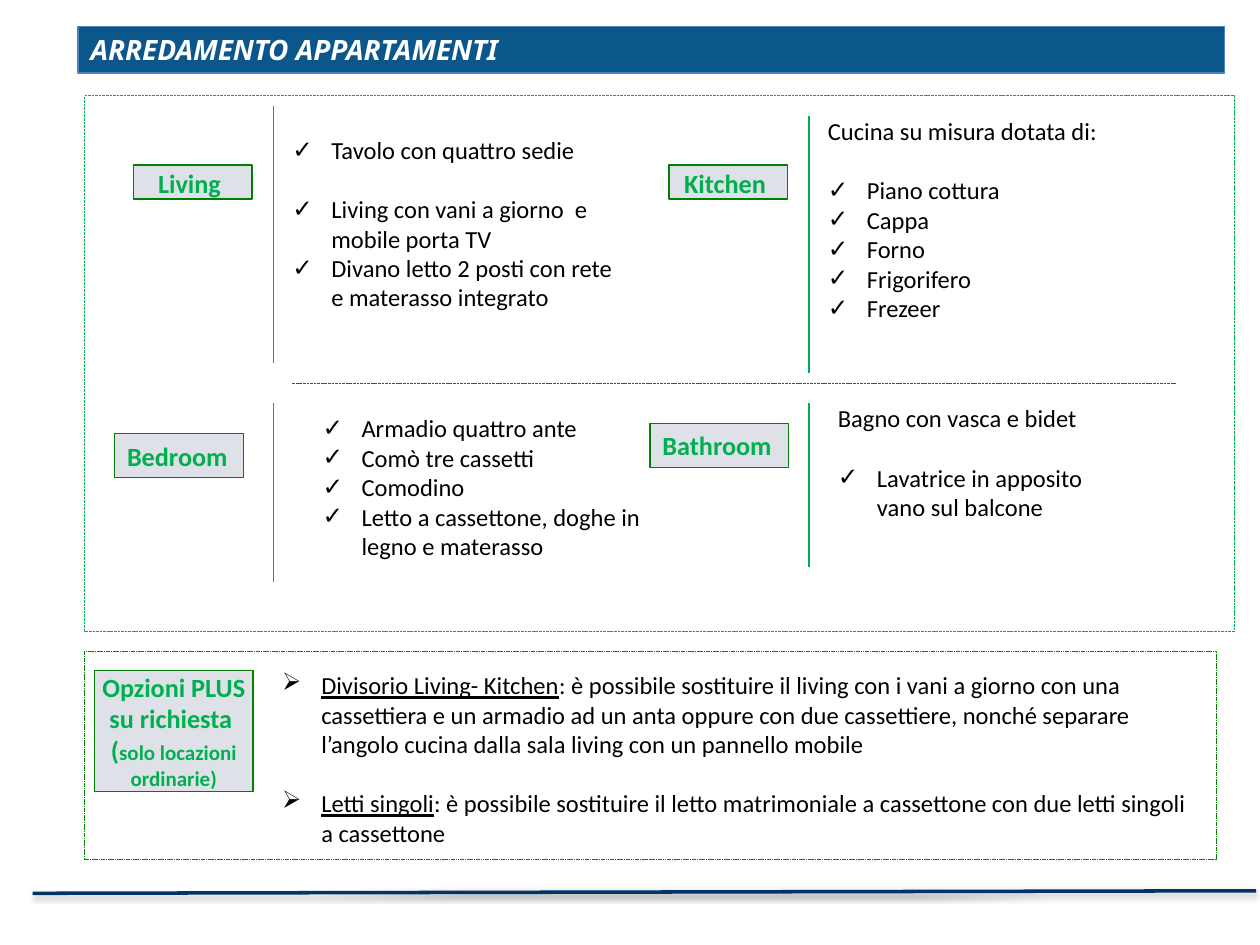
from lxml import etree
from pptx import Presentation
from pptx.dml.color import RGBColor
from pptx.enum import dml, shapes, text
from pptx.oxml import ns
from pptx.util import Inches, Pt

INK, ACCENT, EDGE, PALE = "000000", "00B050", "008000", "DEE1E7"
NAVY, BLUE, BLUE_EDGE, WHITE = "003366", "0B578B", "4F81BD", "FFFFFF"
TICK, ARROW = "✓", "➢"
LINE_GAP = 17.1
FRAME = (0.67, 0.76, 9.13, 4.25)
COLUMN_STEP, ROW_STEP, RAIL = 4.25, 2.28, 1.5


def colour(value):
    return RGBColor.from_string(value)


def child(parent, tag, **attributes):
    return etree.SubElement(parent, ns.qn(tag), attributes)


def within(area, offset):
    return (area[0] + offset[0], area[1] + offset[1], *offset[2:])


def place(part, box):
    part.left, part.top, part.width, part.height = map(Inches, box)


def set_line(line, value, width, dashed=False):
    line.color.rgb = colour(value)
    line.width = Pt(width)
    if dashed:
        line.dash_style = dml.MSO_LINE.SQUARE_DOT
        line._get_or_add_ln().find(ns.qn("a:prstDash")).set("val", "sysDash")


def add_run(paragraph, words, size, value, bold=False, italic=False,
            underline=False, face="Calibri"):
    run = paragraph.add_run()
    run.text = words
    font = run.font
    font.name, font.size = face, Pt(size)
    font.bold, font.italic, font.underline = bold, italic, underline
    font.color.rgb = colour(value)


def set_frame(frame, margins=(0, 0), anchor=text.MSO_ANCHOR.TOP):
    frame.word_wrap = True
    frame.auto_size = text.MSO_AUTO_SIZE.NONE
    frame.vertical_anchor = anchor
    frame.margin_left = frame.margin_right = Inches(margins[0])
    frame.margin_top = frame.margin_bottom = Inches(margins[1])


def add_rectangle(slide, box, edge, width, fill=None, dashed=False):
    rectangle = slide.shapes.add_shape(
        shapes.MSO_SHAPE.RECTANGLE, *map(Inches, box))
    rectangle.shadow.inherit = False
    if fill:
        rectangle.fill.solid()
        rectangle.fill.fore_color.rgb = colour(fill)
    else:
        rectangle.fill.background()
    set_line(rectangle.line, edge, width, dashed)
    return rectangle


def add_rule(slide, start, end, value, width, dashed=False):
    rule = slide.shapes.add_connector(
        shapes.MSO_CONNECTOR.STRAIGHT, *map(Inches, (*start, *end)))
    set_line(rule.line, value, width, dashed)
    return child(rule._element.spPr, "a:effectLst")


def add_label(slide, box, lines, margins=(0, 0), centred=True, width=0.75):
    label = add_rectangle(slide, box, EDGE, width, PALE)
    frame = label.text_frame
    set_frame(frame, margins, text.MSO_ANCHOR.MIDDLE)
    for index, runs in enumerate(lines):
        paragraph = frame.paragraphs[0] if index == 0 else frame.add_paragraph()
        paragraph.alignment = text.PP_ALIGN.CENTER if centred else text.PP_ALIGN.LEFT
        for words, size in runs:
            add_run(paragraph, words, size, ACCENT, bold=True)


def fill_list(holder, box, items):
    place(holder, box)
    frame = holder.text_frame
    set_frame(frame)
    for index, (bullet, gap, runs) in enumerate(items):
        paragraph = frame.paragraphs[0] if index == 0 else frame.add_paragraph()
        paragraph.alignment = text.PP_ALIGN.LEFT
        paragraph.space_before = Pt(gap)
        properties = paragraph._p.get_or_add_pPr()
        indent = Inches(0.31) if bullet else 0
        properties.set("marL", str(indent))
        properties.set("indent", str(-indent))
        if bullet:
            child(properties, "a:buChar", char=bullet)
        else:
            child(properties, "a:buNone")
        for words, underline in runs:
            add_run(paragraph, words, 14, INK, underline=underline)


def ticks(*entries, first_gap=0):
    return [(TICK, 0 if index else first_gap, [(entry, False)])
            for index, entry in enumerate(entries)]


def heading(words):
    return [(None, 0, [(words, False)])]


def build_title(slide, box):
    title = slide.shapes.title
    place(title, box)
    title.fill.solid()
    title.fill.fore_color.rgb = colour(BLUE)
    set_line(title.line, BLUE_EDGE, 0.75)
    set_frame(title.text_frame, (0.1, 0.05), text.MSO_ANCHOR.MIDDLE)
    paragraph = title.text_frame.paragraphs[0]
    paragraph.alignment = text.PP_ALIGN.LEFT
    add_run(paragraph, "ARREDAMENTO APPARTAMENTI", 16, WHITE, bold=True,
            italic=True, face="Noto Sans")


def build_room(slide, area, holder, rail, label, items_box, items):
    x, y = area[0] + RAIL, area[1]
    add_rule(slide, (x, y + rail[0]), (x, y + rail[1]), ACCENT, 0.75)
    add_label(slide, within(area, label["box"]), label["lines"],
              label.get("margins", (0, 0)), label.get("centred", True),
              label.get("width", 0.75))
    fill_list(holder, within(area, items_box), items)


def build_rooms(slide, frame):
    add_rectangle(slide, frame, ACCENT, 0.5, dashed=True)
    middle = frame[1] + ROW_STEP
    add_rule(slide, (frame[0] + 1.65, middle), (frame[0] + 8.66, middle),
             EDGE, 0.5, dashed=True)
    small = (0.39, 0.55, 0.94, 0.27)
    padded = {"margins": (0.1, 0.05), "centred": False}
    rooms = [
        ((0.08, 2.12),
         {"box": small, "lines": [[("Living", 15), (" ", 16)]]},
         (1.65, 0.31, 2.6, 1.95),
         ticks("Tavolo con quattro sedie")
         + ticks("Living con vani a giorno  e mobile porta TV",
                 "Divano letto 2 posti con rete e materasso integrato",
                 first_gap=LINE_GAP)),
        ((0.16, 2.2),
         {"box": small, "lines": [[("Kitchen", 15), (" ", 16)]]},
         (1.65, 0.16, 2.28, 1.65),
         heading("Cucina su misura dotata di:")
         + ticks("Piano cottura", "Cappa", "Forno", "Frigorifero", "Frezeer",
                 first_gap=LINE_GAP)),
        ((0.16, 1.58),
         {"box": (0.24, 0.4, 1.02, 0.35), "lines": [[("Bedroom", 15)]],
          "width": 0.5, **padded},
         (1.89, 0.24, 2.6, 1.18),
         ticks("Armadio quattro ante", "Comò tre cassetti", "Comodino",
               "Letto a cassettone, doghe in legno e materasso")),
        ((0.16, 1.46),
         {"box": (0.24, 0.32, 1.1, 0.35), "lines": [[("Bathroom", 15)]], **padded},
         (1.73, 0.16, 2.28, 1.72),
         heading("Bagno con vasca e bidet")
         + ticks("Lavatrice in apposito vano sul balcone", first_gap=LINE_GAP)),
    ]
    for index, room in enumerate(rooms):
        row, column = divmod(index, 2)
        area = (frame[0] + column * COLUMN_STEP, frame[1] + row * ROW_STEP)
        build_room(slide, area, slide.placeholders[index + 1], *room)


def build_options(slide, frame):
    add_rectangle(slide, frame, EDGE, 0.25, dashed=True)
    add_label(slide, within(frame, (0.08, 0.15, 1.26, 0.96)),
              [[("Opzioni PLUS su richiesta ", 15)],
               [("(", 15), ("solo locazioni ordinarie)", 12)]])
    box = within(frame, (1.57, 0.15, 7.24, 1.41))
    options = slide.shapes.add_textbox(*map(Inches, box))
    fill_list(options, box, [
        (ARROW, 0, [
            ("Divisorio Living- Kitchen", True),
            (": è possibile sostituire il living con i vani a giorno con una "
             "cassettiera e un armadio ad un anta oppure con due cassettiere, "
             "nonché separare l’angolo cucina dalla sala living con un "
             "pannello mobile", False)]),
        (ARROW, LINE_GAP, [
            ("Letti singoli", True),
            (": è possibile sostituire il letto matrimoniale a cassettone con "
             "due letti singoli a cassettone", False)])])


def build_footer(slide, start, end):
    effects = add_rule(slide, start, end, NAVY, 2)
    shadow = child(effects, "a:outerShdw", blurRad=str(Pt(3.1)),
                   dist=str(Pt(1.6)), dir="5400000", rotWithShape="0")
    child(child(shadow, "a:srgbClr", val=INK), "a:alpha", val="38000")


def main():
    deck = Presentation()
    deck.slide_width, deck.slide_height = Inches(10), Inches(7.5)
    slide = deck.slides.add_slide(deck.slide_layouts.get_by_name("Comparison"))
    build_footer(slide, (0.26, 7.09), (9.97, 7.07))
    build_title(slide, (0.62, 0.21, 9.1, 0.37))
    build_rooms(slide, FRAME)
    build_options(slide, (0.67, 5.17, 8.98, 1.65))
    deck.save("out.pptx")


if __name__ == "__main__":
    main()
